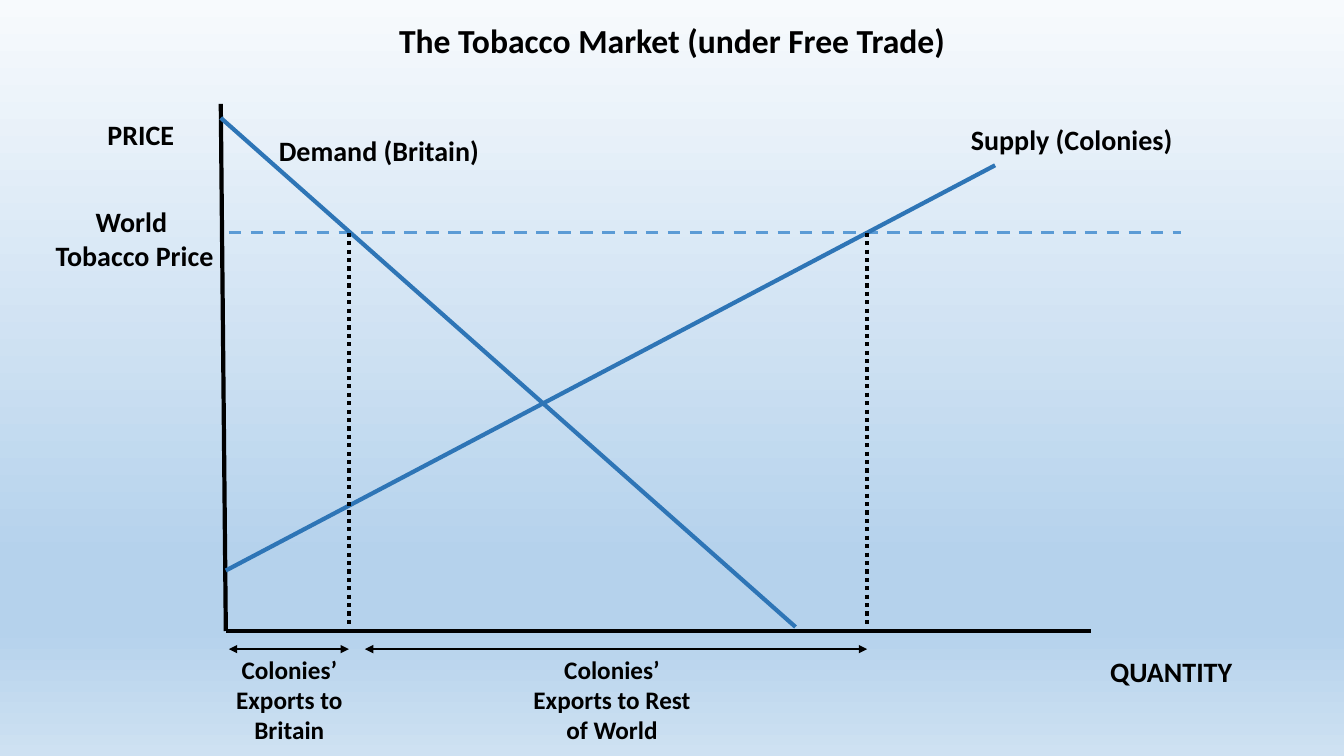
from pptx import Presentation
from pptx.dml.color import RGBColor
from pptx.enum.dml import MSO_LINE
from pptx.enum.shapes import MSO_CONNECTOR
from pptx.enum.text import MSO_AUTO_SIZE, PP_ALIGN
from pptx.oxml import parse_xml
from pptx.oxml.ns import nsdecls, qn
from pptx.util import Inches, Pt
from lxml import etree

STRAIGHT = MSO_CONNECTOR.STRAIGHT
DASH, DOT = MSO_LINE.DASH, MSO_LINE.ROUND_DOT
CENTER = PP_ALIGN.CENTER
GROW = MSO_AUTO_SIZE.SHAPE_TO_FIT_TEXT

THEME = {
    "ink": RGBColor.from_string("000000"),
    "curve": RGBColor.from_string("2E75B6"),
    "world": RGBColor.from_string("5B9BD5"),
    "sky": [(0, "F7FAFD"), (74, "B5D2EC"), (83, "B5D2EC"), (100, "CEE1F2")],
    "font": "Calibri",
    "title": Pt(24),
    "label": Pt(20),
    "note": Pt(18),
}

deck = Presentation()
deck.slide_width, deck.slide_height = Inches(13.33), Inches(7.5)
slide = deck.slides.add_slide(deck.slide_layouts[6])

# Background: vertical gradient
fill = slide.background.fill
fill.gradient()
fill.gradient_angle = 270
stops = slide.background._cSld.find(".//" + qn("a:gsLst"))
for stop in list(stops):
    stops.remove(stop)
for spot, color in THEME["sky"]:
    stops.append(parse_xml(
        f'<a:gs {nsdecls("a")} pos="{spot * 1000}"><a:srgbClr val="{color}"/></a:gs>'))


def draw(start, end, color, width, dash=None, arrows=False):
    line = slide.shapes.add_connector(
        STRAIGHT, *[Inches(n) for n in (*start, *end)])
    line.line.color.rgb = THEME[color]
    line.line.width = Pt(width)
    if dash:
        line.line.dash_style = dash
    if arrows:
        for tip in ("a:headEnd", "a:tailEnd"):
            etree.SubElement(line.line._ln, qn(tip), type="triangle")
    etree.SubElement(line._element.spPr, qn("a:effectLst"))


def write(box, size, *lines):
    shape = slide.shapes.add_textbox(*[Inches(n) for n in box])
    frame = shape.text_frame
    frame.word_wrap = True
    frame.auto_size = GROW
    style = {"name": THEME["font"], "size": THEME[size], "bold": True}
    for i, words in enumerate(lines):
        para = frame.add_paragraph() if i else frame.paragraphs[0]
        para.alignment = CENTER
        run = para.add_run()
        run.text = words
        for key, value in style.items():
            setattr(run.font, key, value)
        run.font.color.rgb = THEME["ink"]


# Key levels of the graph
base, price, foot, span = 6.26, 2.31, 6.2, 6.44
home, total = 3.46, 8.6

# Axes, world price, supply and demand
draw((2.19, 1.03), (2.24, base), "ink", 3)
draw((2.24, base), (10.82, base), "ink", 3)
draw((2.27, price), (11.71, price), "world", 2.25, DASH)
draw((2.24, 5.66), (9.87, 1.64), "curve", 3)
draw((2.19, 1.17), (7.89, 6.22), "curve", 3)

# Drop lines and the export spans they mark
for left, right in ((2.27, home), (3.62, total)):
    draw((right, price), (right, foot), "ink", 3, DOT)
    draw((left, span), (right, span), "ink", 1.5, arrows=True)

# Title and labels
write((2.29, 0.15, 8.75, 0.5), "title", "The Tobacco Market (under Free Trade)")
write((2.01, span, 1.72, 1.31), "note", "Colonies’", "Exports to Britain")
write((5.15, span, 1.84, 1.01), "note", "Colonies’ Exports to Rest of World")
write((2.27, 1.28, 3.04, 0.44), "label", "Demand (Britain) ")
write((9.4, 1.17, 2.46, 0.44), "label", "Supply (Colonies)")
write((-0.08, 1.98, 2.83, 0.77), "label", "World ", "Tobacco Price")
write((-0.05, 1.12, 2.83, 0.44), "label", " PRICE")
write((10.17, span, 2.83, 0.44), "label", " QUANTITY")

deck.save("out.pptx")
